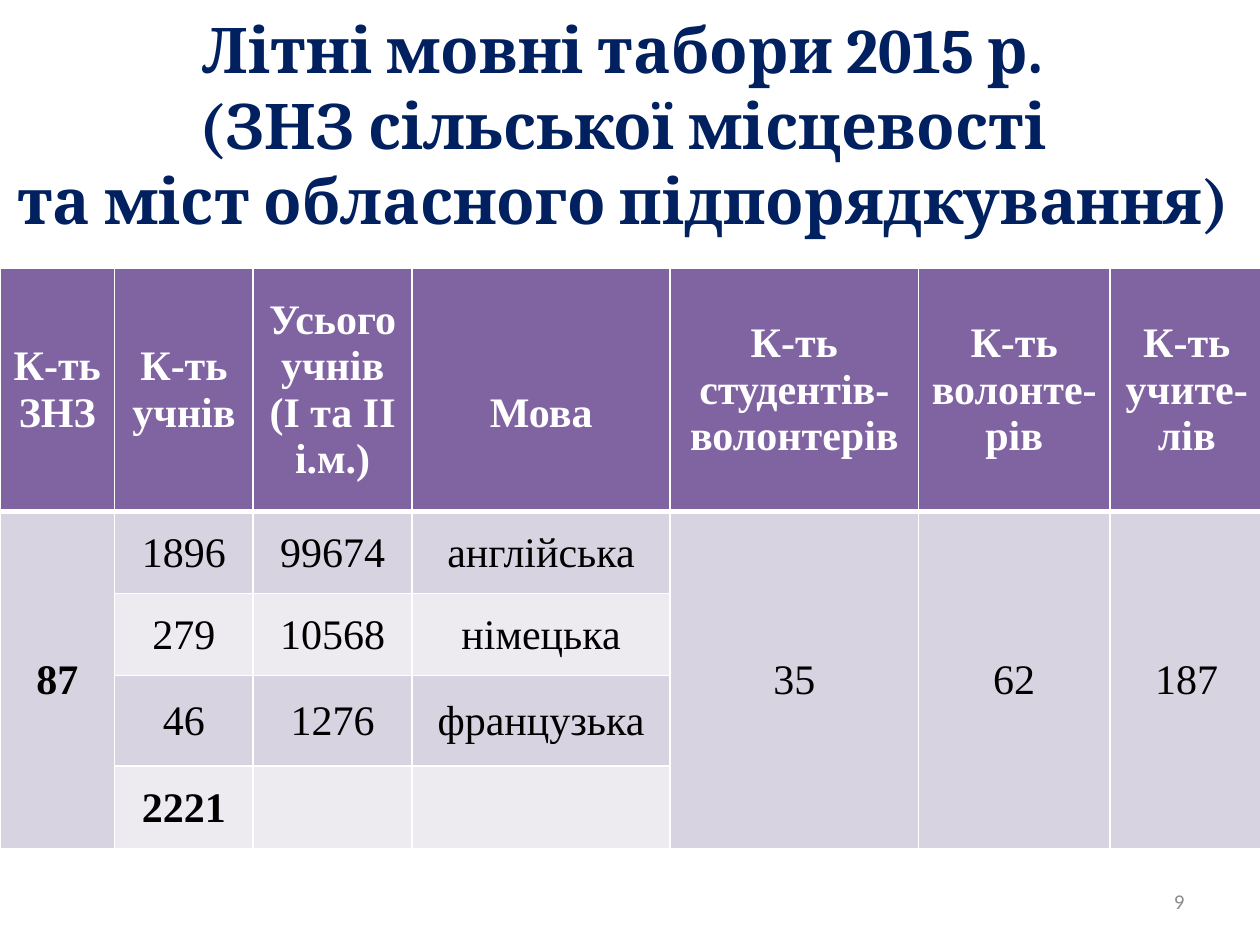
from lxml import etree
from pptx import Presentation
from pptx.dml.color import RGBColor
from pptx.enum.text import MSO_ANCHOR, PP_ALIGN
from pptx.oxml.ns import qn
from pptx.util import Inches, Pt

MIDDLE = MSO_ANCHOR.MIDDLE
CENTER, RIGHT = PP_ALIGN.CENTER, PP_ALIGN.RIGHT

COLORS = {
    "navy": "002060", "white": "FFFFFF", "black": "000000", "gray": "8C8C8C",
    "head": "8064A2", "dark": "D8D3E0", "light": "EDEAF0",
}
SERIF = "Times New Roman"

TITLE = ("Літні мовні табори 2015 р. \v(ЗНЗ сільської місцевості \v"
         "та міст обласного підпорядкування) ")
HEADS = ["К-ть ЗНЗ", "К-ть учнів", "Усього учнів (І та ІІ і.м.)", "Мова",
         "К-ть студентів-волонтерів", "К-ть волонте-рів", "К-ть учите-лів"]
ROWS = [
    ["87", "1896", "99674", "англійська", "35", "62", "187"],
    ["", "279", "10568", "німецька", "", "", ""],
    ["", "46", "1276", "французька", "", "", ""],
    ["", "2221", "", "", "", "", ""],
]
BOLD = {"87", "2221"}
MERGED = (0, 4, 5, 6)
WIDTHS = [0.91, 1.1, 1.26, 2.05, 1.97, 1.52, 1.22]
HEIGHTS = [1.93, 0.65, 0.65, 0.72, 0.66]


def rgb(name):
    return RGBColor.from_string(COLORS[name])


def write(frame, text, font=SERIF, size=24, color="black", bold=False,
          align=CENTER):
    para = frame.paragraphs[0]
    para.text = text
    para.alignment = align
    for item in [para, *para.runs]:
        item.font.name = font
        item.font.size = Pt(size)
        item.font.bold = bold
        item.font.color.rgb = rgb(color)


def add_text(slide, box, text, **form):
    frame = slide.shapes.add_textbox(*map(Inches, box)).text_frame
    frame.word_wrap = True
    frame.vertical_anchor = MIDDLE
    write(frame, text, **form)


def edge(cell, bottom):
    """Draw white cell borders; the bottom width is given in points."""
    props = cell._tc.get_or_add_tcPr()
    sides = [("lnL", 1), ("lnR", 1), ("lnT", 1), ("lnB", bottom)]
    for i, (side, width) in enumerate(sides):
        line = etree.Element(qn(f"a:{side}"), w=str(Pt(width)))
        fill = etree.SubElement(line, qn("a:solidFill"))
        etree.SubElement(fill, qn("a:srgbClr"), val=COLORS["white"])
        props.insert(i, line)


def add_grid(slide):
    data = [HEADS] + ROWS
    size = map(Inches, (0, 2.13, sum(WIDTHS), sum(HEIGHTS)))
    table = slide.shapes.add_table(len(data), len(HEADS), *size).table
    for col, width in zip(table.columns, WIDTHS):
        col.width = Inches(width)
    for row, height in zip(table.rows, HEIGHTS):
        row.height = Inches(height)
    for r, texts in enumerate(data):
        head = r == 0
        for c, text in enumerate(texts):
            cell = table.cell(r, c)
            cell.vertical_anchor = MIDDLE
            cell.fill.solid()
            shade = "head" if head else "dark" if r % 2 or c in MERGED else "light"
            cell.fill.fore_color.rgb = rgb(shade)
            edge(cell, 3 if head else 1)
            if not head and c not in MERGED:
                cell.margin_left = cell.margin_right = Inches(0.01)
                cell.margin_top, cell.margin_bottom = Inches(0.01), 0
            write(cell.text_frame, text, bold=head or text in BOLD,
                  color="white" if head else "black")
    # The language heading sits one line lower than its neighbours
    table.cell(0, HEADS.index("Мова")).margin_top = Inches(0.42)
    for c in MERGED:
        table.cell(1, c).merge(table.cell(len(ROWS), c))


def main():
    deck = Presentation()
    deck.slide_width, deck.slide_height = Inches(10), Inches(7.5)
    slide = deck.slides.add_slide(deck.slide_layouts[6])
    add_text(slide, (0, 0, 10, 1.97), TITLE, font="Cambria", size=36,
             color="navy", bold=True)
    add_grid(slide)
    add_text(slide, (7.17, 6.95, 2.33, 0.4), "9", font="Calibri", size=12,
             color="gray", align=RIGHT)
    deck.save("out.pptx")


if __name__ == "__main__":
    main()
